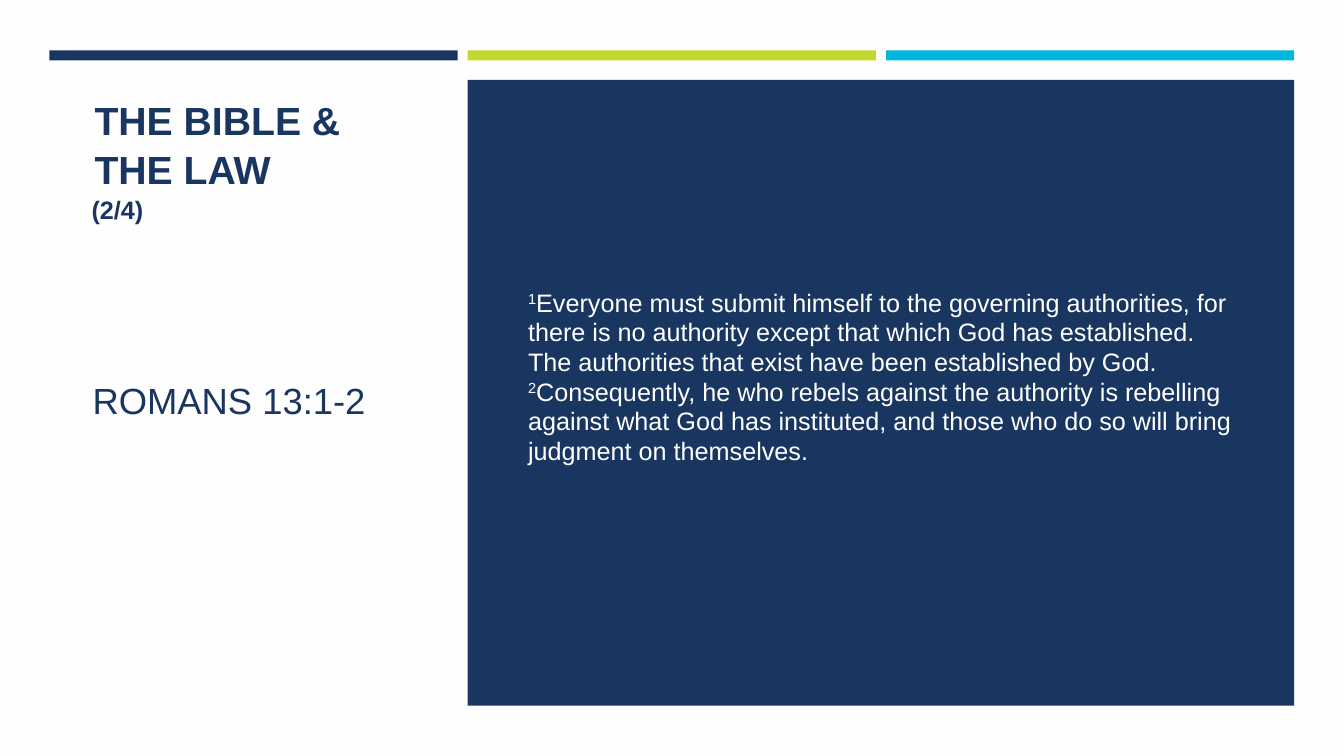
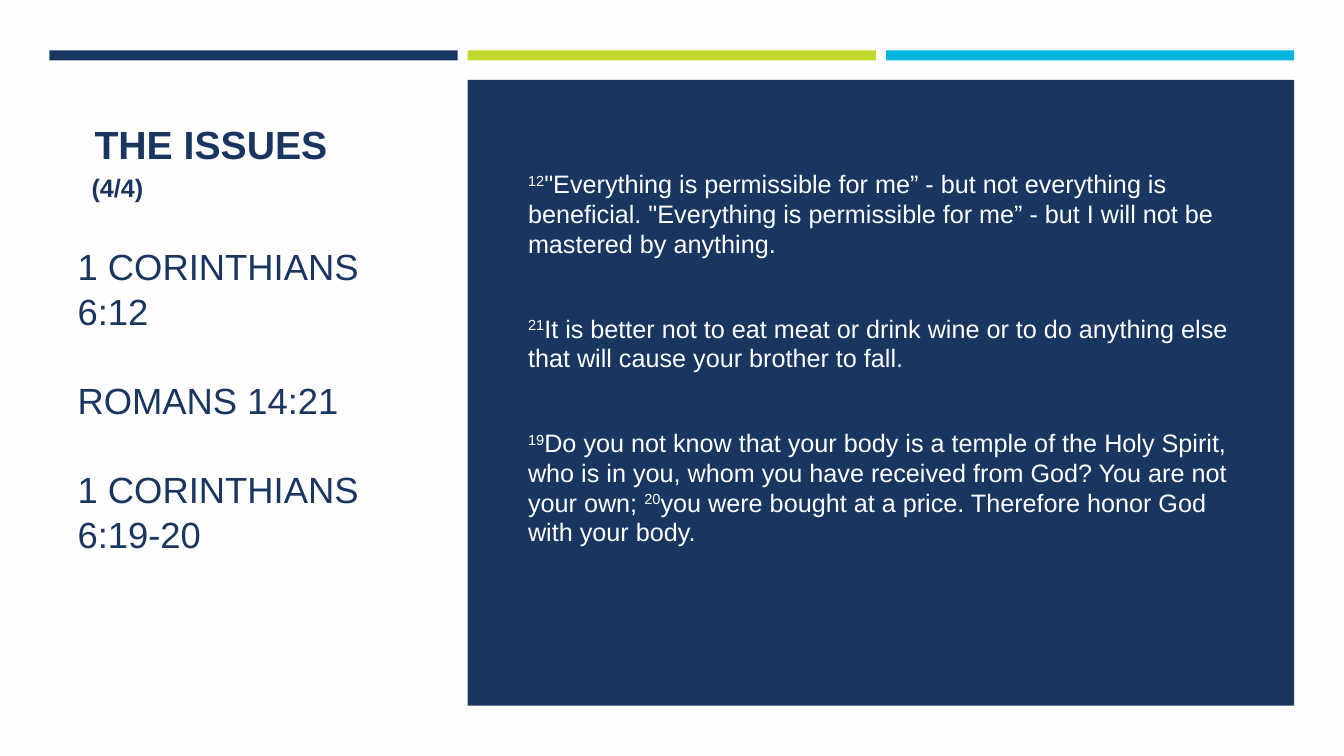
"""Build two scripture slides with a shared band, sidebar and verse panel."""
from dataclasses import dataclass

from pptx import Presentation
from pptx.dml.color import RGBColor
from pptx.enum import shapes, text
from pptx.util import Pt


@dataclass(frozen=True)
class Theme:
    """Colours, type sizes and spacing shared by the slides."""
    paper: str = "FFFEFF"
    navy: str = "193661"
    lime: str = "C3D82E"
    cyan: str = "00B6DE"
    white: str = "FFFFFF"
    font: str = "Arial"
    heading: float = 28
    reference: float = 26
    body: float = 18
    heading_spacing: float = 1.04
    body_spacing: float = 0.985
    reference_gap: float = 31
    verse_gap: float = 39.6


THEME = Theme()
SLIDE_SIZE = (960, 540)
BAND_BOX = (35.3, 36, 889.2, 7.2)
SIDEBAR_BOX = (35.3, 57, 291.6, 447)
PANEL_BOX = (334.1, 57, 590.4, 447)

SLIDES = [
    {
        "heading": "THE BIBLE & THE LAW",
        "part": "(2/4)",
        "part_height": 79.2,
        "reference_left": 23.7,
        "references": ["ROMANS 13:1-2"],
        "verses": [
            [("1", "Everyone must submit himself to the governing authorities, for there is no "
                   "authority except that which God has established. The authorities that exist "
                   "have been established by God. "),
             ("2", "Consequently, he who rebels against the authority is rebelling against what "
                   "God has instituted, and those who do so will bring judgment on themselves.")],
        ],
        "panel_foot": 0,
    },
    {
        "heading": "THE ISSUES",
        "part": "(4/4)",
        "part_height": 47.5,
        "reference_left": 13,
        "references": ["1 CORINTHIANS 6:12", "ROMANS 14:21", "1 CORINTHIANS 6:19-20"],
        "verses": [
            [("12", "\"Everything is permissible for me” - but not everything is beneficial. "
                    "\"Everything is permissible for me” - but I will not be mastered by anything.")],
            [("21", "It is better not to eat meat or drink wine or to do anything else that will "
                    "cause your brother to fall.")],
            [("19", "Do you not know that your body is a temple of the Holy Spirit, who is in you, "
                    "whom you have received from God? You are not your own; "),
             ("20", "you were bought at a price. Therefore honor God with your body.")],
        ],
        "panel_foot": 26.4,
    },
]


def apply(target, formats):
    """Set each attribute in formats on target."""
    for name, value in formats.items():
        setattr(target, name, value)


def add_block(slide, box, color):
    """Draw a plain filled rectangle."""
    block = slide.shapes.add_shape(shapes.MSO_SHAPE.RECTANGLE, *map(Pt, box))
    block.shadow.inherit = False
    block.fill.solid()
    block.fill.fore_color.rgb = RGBColor.from_string(color)
    block.line.fill.background()


def add_copy(slide, box, paragraphs, size, color, bold=False, spacing=THEME.heading_spacing,
             gap=0, head=0, foot=0):
    """Write paragraphs of (verse number, words) pairs, centred vertically in a box."""
    frame = slide.shapes.add_textbox(*map(Pt, box)).text_frame
    apply(frame, {"word_wrap": True, "vertical_anchor": text.MSO_ANCHOR.MIDDLE,
                  "margin_top": Pt(3.6 + head), "margin_bottom": Pt(3.6 + foot)})
    for index, passages in enumerate(paragraphs):
        paragraph = frame.paragraphs[0] if index == 0 else frame.add_paragraph()
        apply(paragraph, {"line_spacing": spacing, "space_before": Pt(gap if index else 0)})
        for passage in passages:
            for words, baseline in zip(passage, ("30000", "0")):
                if not words:
                    continue
                run = paragraph.add_run()
                run.text = words
                apply(run.font, {"name": THEME.font, "size": Pt(size), "bold": bold})
                run.font.color.rgb = RGBColor.from_string(color)
                run._r.get_or_add_rPr().set("baseline", baseline)


def add_band(slide, box):
    """Draw three equal colour bars across the top."""
    left, top, width, height = box
    gap = 7.2
    bar_width = (width - 2 * gap) / 3
    for index, color in enumerate((THEME.navy, THEME.lime, THEME.cyan)):
        add_block(slide, (left + index * (bar_width + gap), top, bar_width, height), color)


def add_sidebar(slide, box, content):
    """Write the heading, part number and scripture references."""
    left, top, width, _ = box
    add_copy(slide, (left + 25.2, top + 5.6, 240.5, 79.2), [[("", content["heading"])]],
             THEME.heading, THEME.navy, bold=True)
    add_copy(slide, (left + 23, top + 52.4, width - 2, content["part_height"]),
             [[("", content["part"])]], THEME.body, THEME.navy, bold=True)
    inset = content["reference_left"]
    add_copy(slide, (left + inset, top + 27.2, 264 - inset, 370.8),
             [[("", reference)] for reference in content["references"]],
             THEME.reference, THEME.navy, gap=THEME.reference_gap, head=THEME.reference_gap)


def add_panel(slide, box, content):
    """Draw the dark panel with its verses."""
    left, top, width, _ = box
    add_block(slide, box, THEME.navy)
    add_copy(slide, (left + 36, top + 27.2, width - 70.6, 370.8), content["verses"],
             THEME.body, THEME.white, spacing=THEME.body_spacing, gap=THEME.verse_gap,
             foot=content["panel_foot"])


def add_scripture_slide(deck, content):
    """Add one slide made of band, panel and sidebar."""
    slide = deck.slides.add_slide(deck.slide_layouts[6])
    slide.background.fill.solid()
    slide.background.fill.fore_color.rgb = RGBColor.from_string(THEME.paper)
    add_band(slide, BAND_BOX)
    add_panel(slide, PANEL_BOX, content)
    add_sidebar(slide, SIDEBAR_BOX, content)


def main():
    """Build and save the deck."""
    deck = Presentation()
    deck.slide_width, deck.slide_height = map(Pt, SLIDE_SIZE)
    for content in SLIDES:
        add_scripture_slide(deck, content)
    deck.save("out.pptx")


if __name__ == "__main__":
    main()
